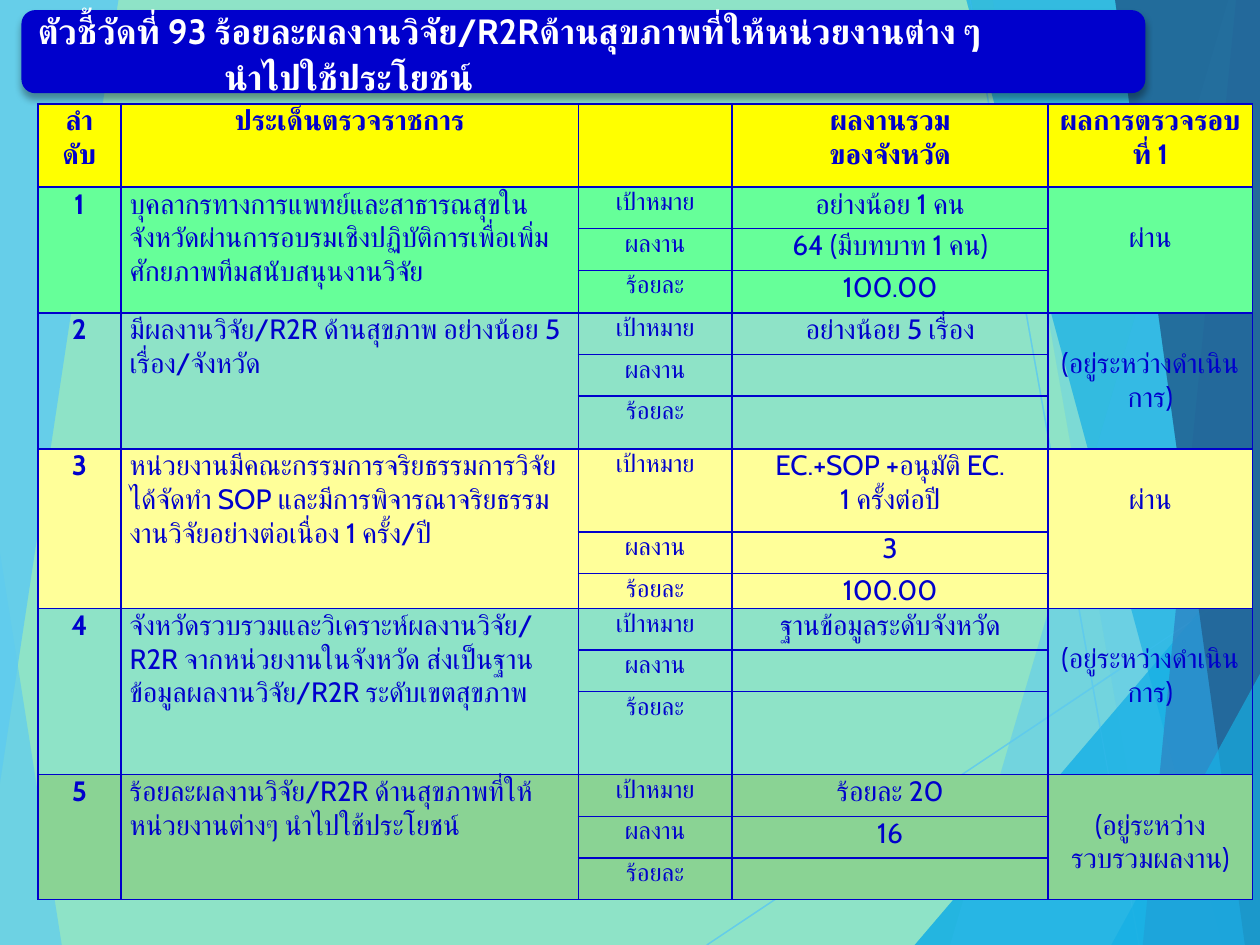
import dataclasses
import typing

import lxml.etree
import pptx
import pptx.dml.color
import pptx.dml.fill
import pptx.enum.shapes
import pptx.enum.text
import pptx.oxml.ns
import pptx.util

WIDE, HIGH = pptx.util.Inches(10), pptx.util.Inches(7.5)
FONT, BLUE, WHITE, SKY = "Cabin", "0000CC", "FFFFFF", "5FCBEF"
COLS = (6.6, 36.3, 12.2, 25.1, 16.2)
ROWS = (8.8, 4.4, 4.4, 4.5, 4.4, 4.4, 5.6, 8.8, 4.4, 3.7, 4.4, 4.4, 8.8, 4.4, 4.4, 4.4)
HEADS = (("ลำ", "ดับ"), ("ประเด็นตรวจราชการ",), (), ("ผลงานรวม", "ของจังหวัด"), ("ผลการตรวจรอบที่ 1",))
STEPS = ("เป้าหมาย", "ผลงาน", "ร้อยละ")
LEFT = pptx.enum.text.PP_ALIGN.LEFT
MID = pptx.enum.text.PP_ALIGN.CENTER


@dataclasses.dataclass
class Facet:
    """A tinted polygon with points in percent of the slide."""
    color: str
    alpha: int
    points: tuple


@dataclasses.dataclass
class Issue:
    """One inspected topic, which takes three table rows."""
    text: str
    goal: tuple
    work: str
    rate: str
    state: str
    fill: str = ""


FACETS = (
    Facet(SKY, 36, ((97.5, 0), (75.4, 100), (100, 100), (100, 0))),
    Facet(SKY, 20, ((78.8, 0), (91.9, 100), (100, 100), (100, 0))),
    Facet("17B0E4", 66, ((72.6, 100), (100, 57.2), (100, 100))),
    Facet("17B0E4", 50, ((76.7, 0), (97, 100), (100, 100), (100, 0))),
    Facet("2E83C3", 70, ((98.1, 0), (90.7, 100), (100, 100), (100, 0))),
    Facet("226292", 82, ((88.5, 0), (98.8, 100), (100, 100), (100, 0))),
    Facet("17B0E4", 66, ((88.2, 100), (100, 71.3), (100, 100))),
)
RAYS = (((56.1, 100), (100, 60.9)), ((77, 0), (90.4, 100)))
LOW = Facet(SKY, 70, ((0, 58.5), (4.9, 100), (0, 100)))
TOP = Facet(SKY, 85, ((0, 0), (9.4, 0), (0, 82.9)))

ISSUES = (
    Issue("บุคลากรทางการแพทย์และสาธารณสุขในจังหวัดผ่านการอบรมเชิงปฏิบัติการเพื่อเพิ่มศักยภาพทีมสนับสนุนงานวิจัย",
          ("อย่างน้อย 1 คน",), "64 (มีบทบาท 1 คน)", "100.00", "ผ่าน", "66FF99"),
    Issue("มีผลงานวิจัย/R2R ด้านสุขภาพ อย่างน้อย 5 เรื่อง/จังหวัด",
          ("อย่างน้อย 5 เรื่อง",), "", "", "(อยู่ระหว่างดำเนินการ)"),
    Issue("หน่วยงานมีคณะกรรมการจริยธรรมการวิจัย ได้จัดทำ SOP และมีการพิจารณาจริยธรรมงานวิจัยอย่างต่อเนื่อง 1 ครั้ง/ปี",
          ("EC.+SOP +อนุมัติ EC.", "1 ครั้งต่อปี"), "3", "100.00", "ผ่าน", "FFFF99"),
    Issue("จังหวัดรวบรวมและวิเคราะห์ผลงานวิจัย/R2R จากหน่วยงานในจังหวัด ส่งเป็นฐานข้อมูลผลงานวิจัย/R2R ระดับเขตสุขภาพ",
          ("ฐานข้อมูลระดับจังหวัด",), "", "", "(อยู่ระหว่างดำเนินการ)"),
    Issue("ร้อยละผลงานวิจัย/R2R ด้านสุขภาพที่ให้หน่วยงานต่างๆ นำไปใช้ประโยชน์",
          ("ร้อยละ 20",), "16", "", "(อยู่ระหว่างรวบรวมผลงาน)", "8AD394"),
)


def across(share: float) -> int:
    """Turn a percent of the slide width into a length."""
    return round(WIDE * share / 100)


def down(share: float) -> int:
    """Turn a percent of the slide height into a length."""
    return round(HIGH * share / 100)


def add(node: typing.Any, tag: str, **attrs: str) -> typing.Any:
    """Append a drawing element with its attributes."""
    return lxml.etree.SubElement(node, pptx.oxml.ns.qn(tag), attrs)


def paint(fill: pptx.dml.fill.FillFormat, color: str, alpha: int = 100) -> None:
    """Give a fill one colour and an opacity in percent."""
    fill.solid()
    fill.fore_color.rgb = pptx.dml.color.RGBColor.from_string(color)
    if alpha < 100:
        for node in fill._xPr.iter(pptx.oxml.ns.qn("a:srgbClr")):
            add(node, "a:alpha", val=str(alpha * 1000))


def write(frame: typing.Any, lines: typing.Sequence[str], size: int,
          color: str = BLUE, bold: bool = False, align: typing.Any = MID) -> None:
    """Write each line as a paragraph of one run."""
    for i, line in enumerate(lines):
        para = frame.paragraphs[0] if i == 0 else frame.add_paragraph()
        para.alignment = align
        run = para.add_run()
        run.text = line
        font = run.font
        font.name, font.size, font.bold = FONT, pptx.util.Pt(size), bold
        paint(font.fill, color)
        add(font._element, "a:cs", typeface=FONT)


def draw_facet(shapes: typing.Any, facet: Facet) -> None:
    """Draw one background polygon."""
    first, *rest = [(across(x), down(y)) for x, y in facet.points]
    path = shapes.build_freeform(*first)
    path.add_line_segments(rest)
    shape = path.convert_to_shape()
    shape.shadow.inherit = False
    paint(shape.fill, facet.color, facet.alpha)
    shape.line.fill.background()


def draw_ray(shapes: typing.Any, start: tuple, end: tuple) -> None:
    """Draw one thin background line."""
    ray = shapes.add_connector(pptx.enum.shapes.MSO_CONNECTOR.STRAIGHT,
                               across(start[0]), down(start[1]), across(end[0]), down(end[1]))
    ray.line.width = pptx.util.Pt(0.75)
    paint(ray.line.fill, SKY, 70)
    add(ray._element.spPr, "a:effectLst")


def draw_back(slide: typing.Any) -> None:
    """Draw the two layers of facets on the background."""
    paint(slide.background.fill, "8EE3C7")
    draw_facet(slide.shapes, LOW)
    for _ in range(2):
        for ray in RAYS:
            draw_ray(slide.shapes, *ray)
        for facet in FACETS:
            draw_facet(slide.shapes, facet)
    draw_facet(slide.shapes, TOP)


def fill_cell(cell: typing.Any, lines: typing.Sequence[str], fill: str, size: int = 16,
              bold: bool = False, align: typing.Any = MID, top: float = 0) -> None:
    """Set the text, borders and fill of one cell."""
    cell.margin_left = cell.margin_right = pptx.util.Inches(0.07)
    cell.margin_top, cell.margin_bottom = down(top), 0
    write(cell.text_frame, lines, size, bold=bold, align=align)
    props = cell._tc.get_or_add_tcPr()
    for side in ("a:lnL", "a:lnR", "a:lnT", "a:lnB"):
        edge = add(props, side, w=str(pptx.util.Pt(1)))
        add(add(edge, "a:solidFill"), "a:srgbClr", val=BLUE)
    if fill:
        paint(cell.fill, fill)
    else:
        cell.fill.background()


def draw_table(slide: typing.Any) -> None:
    """Draw the table of issues."""
    frame = slide.shapes.add_table(len(ROWS), len(COLS), across(3), down(11),
                                   across(sum(COLS)), down(sum(ROWS)))
    table = frame.table
    table.first_row = table.horz_banding = False
    for col, share in zip(table.columns, COLS):
        col.width = across(share)
    for row, share in zip(table.rows, ROWS):
        row.height = down(share)
    for c, lines in enumerate(HEADS):
        fill_cell(table.cell(0, c), lines, "FFFF00", bold=True)
    for i, issue in enumerate(ISSUES):
        top = 1 + i * len(STEPS)
        for j, (step, lines) in enumerate(zip(STEPS, (issue.goal, (issue.work,), (issue.rate,)))):
            row = top + j
            first = j == 0
            fill_cell(table.cell(row, 0), (str(i + 1),) if first else (), issue.fill, bold=True)
            fill_cell(table.cell(row, 1), (issue.text,) if first else (), issue.fill, align=LEFT)
            fill_cell(table.cell(row, 2), (step,), issue.fill, 14)
            fill_cell(table.cell(row, 3), [line for line in lines if line], issue.fill)
            fill_cell(table.cell(row, 4), (issue.state,) if first else (), issue.fill, top=3.55 * first)
        for c in (0, 1, 4):
            table.cell(top, c).merge(table.cell(top + len(STEPS) - 1, c))


def draw_title(slide: typing.Any) -> None:
    """Draw the blue bar with the title over it."""
    box = across(1.7), down(1.07), across(89.2), down(8.8)
    bar = slide.shapes.add_shape(pptx.enum.shapes.MSO_SHAPE.ROUNDED_RECTANGLE, *box)
    bar.shadow.inherit = False
    paint(bar.fill, BLUE)
    bar.line.fill.background()
    glow = add(bar._element.spPr.find(pptx.oxml.ns.qn("a:effectLst")), "a:outerShdw",
               blurRad=str(pptx.util.Pt(4)), dist=str(pptx.util.Pt(3)), dir="5400000", rotWithShape="0")
    add(add(glow, "a:srgbClr", val="000000"), "a:alpha", val="35000")
    title = slide.shapes.title
    title.left, title.top, title.width, title.height = box
    frame = title.text_frame
    frame.word_wrap = True
    frame.auto_size = pptx.enum.text.MSO_AUTO_SIZE.NONE
    frame.vertical_anchor = pptx.enum.text.MSO_ANCHOR.MIDDLE
    frame.margin_left = across(1.3)
    frame.margin_top = frame.margin_bottom = 0
    write(frame, ("ตัวชี้วัดที่ 93 ร้อยละผลงานวิจัย/R2Rด้านสุขภาพที่ให้หน่วยงานต่าง ๆ", "นำไปใช้ประโยชน์"),
          20, WHITE, True, LEFT)
    for para in frame.paragraphs:
        para.line_spacing = 1.1
    frame.paragraphs[1]._p.get_or_add_pPr().set("marL", str(across(14.8)))
    slide.shapes._spTree.append(title._element)


def main() -> None:
    """Build and save the slide."""
    deck = pptx.Presentation()
    deck.slide_width, deck.slide_height = WIDE, HIGH
    slide = deck.slides.add_slide(deck.slide_layouts[5])
    draw_back(slide)
    draw_table(slide)
    draw_title(slide)
    deck.save("out.pptx")


if __name__ == "__main__":
    main()
